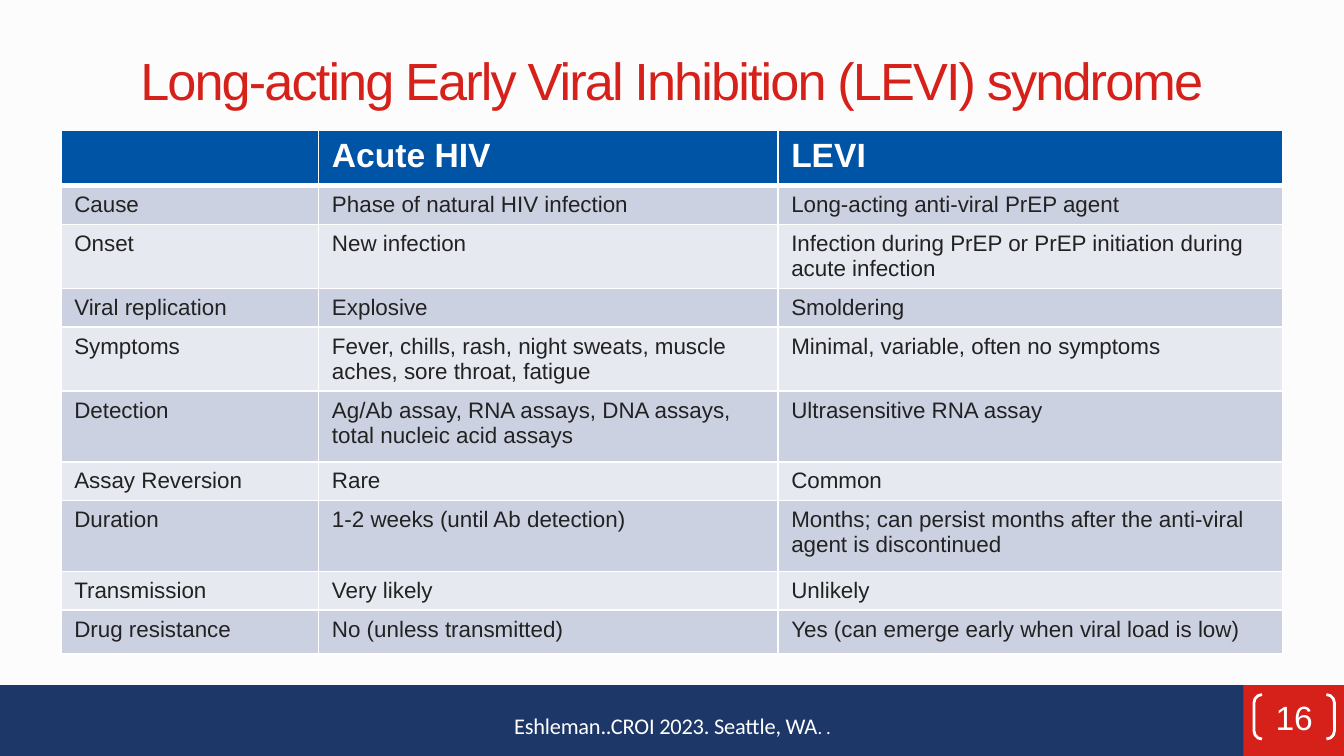
from lxml import etree
from pptx import Presentation
from pptx import util as u
from pptx.dml.color import RGBColor
from pptx.enum import shapes, text
from pptx.oxml.ns import qn

RED = RGBColor(0xD6, 0x20, 0x1A)
NAVY = RGBColor(0x1C, 0x37, 0x68)
BLUE = RGBColor(0x00, 0x54, 0xA6)
BAND_DARK = RGBColor(0xCC, 0xD1, 0xE1)
BAND_LIGHT = RGBColor(0xE7, 0xE9, 0xF1)
INK = RGBColor(0x22, 0x22, 0x22)
WHITE = RGBColor(0xFF, 0xFF, 0xFF)
PAPER = RGBColor(0xFC, 0xFC, 0xFC)

COLUMN_WIDTHS = [4.87, 8.68, 9.54]
ROW_HEIGHTS = [1.04, 0.73, 1.21, 0.73, 1.21, 1.34, 0.73, 1.34, 0.73, 0.83]
ROWS = [
    ("", "Acute HIV", "LEVI"),
    ("Cause", "Phase of natural HIV infection", "Long-acting anti-viral PrEP agent"),
    ("Onset", "New infection",
     "Infection during PrEP or PrEP initiation during acute infection"),
    ("Viral replication", "Explosive", "Smoldering"),
    ("Symptoms", "Fever, chills, rash, night sweats, muscle aches, sore throat, fatigue",
     "Minimal, variable, often no symptoms"),
    ("Detection", "Ag/Ab assay, RNA assays, DNA assays, total nucleic acid assays",
     "Ultrasensitive RNA assay"),
    ("Assay Reversion", "Rare", "Common"),
    ("Duration", "1-2 weeks (until Ab detection)",
     "Months; can persist months after the anti-viral agent is discontinued"),
    ("Transmission", "Very likely", "Unlikely"),
    ("Drug resistance", "No (unless transmitted)",
     "Yes (can emerge early when viral load is low)"),
]


def place(left, top, width, height):
    return u.Cm(left), u.Cm(top), u.Cm(width), u.Cm(height)


def style_span(span, size, color, font="Arial", bold=False, spacing=None):
    span.font.size = u.Pt(size)
    span.font.name = font
    span.font.bold = bold
    span.font.color.rgb = color
    if spacing is not None:
        span.font._element.set("spc", str(spacing))  # hundredths of a point


def set_frame(frame, anchor, margin=0):
    frame.word_wrap = True
    frame.vertical_anchor = anchor
    frame.margin_left = frame.margin_right = u.Cm(margin)
    frame.margin_top = frame.margin_bottom = u.Cm(margin)
    frame.paragraphs[0].alignment = text.PP_ALIGN.CENTER


def add_bar(slide, left, width, color):
    bar = slide.shapes.add_shape(
        shapes.MSO_SHAPE.RECTANGLE, *place(left, 12.95, width, 1.34))
    bar.shadow.inherit = False
    bar.fill.solid()
    bar.fill.fore_color.rgb = color
    bar.line.fill.background()


def set_title(slide, wording):
    title = slide.shapes.title
    title.left, title.top, title.width, title.height = place(1.15, 0.3, 23.09, 2.4)
    title.text_frame.text = wording
    set_frame(title.text_frame, text.MSO_ANCHOR.MIDDLE, 0.13)
    style_span(title.text_frame.paragraphs[0].runs[0], 28, RED, spacing=-100)


def set_borders(cell, widths):
    properties = cell._tc.get_or_add_tcPr()
    for index, (side, width) in enumerate(widths.items()):
        line = etree.Element(qn(f"a:ln{side}"), w=str(u.Pt(width)))
        fill = etree.SubElement(line, qn("a:solidFill"))
        etree.SubElement(fill, qn("a:srgbClr"), val=str(WHITE))
        properties.insert(index, line)


def add_comparison(slide):
    frame = slide.shapes.add_table(
        len(ROWS), len(COLUMN_WIDTHS),
        *place(1.15, 2.47, sum(COLUMN_WIDTHS), sum(ROW_HEIGHTS)))
    table = frame.table
    for column, width in zip(table.columns, COLUMN_WIDTHS):
        column.width = u.Cm(width)
    for index, (row, height, wordings) in enumerate(zip(table.rows, ROW_HEIGHTS, ROWS)):
        row.height = u.Cm(height)
        header = index == 0
        color = BLUE if header else (BAND_LIGHT, BAND_DARK)[index % 2]
        # The heavier rule lies between the header and the first row
        borders = {"L": 1, "R": 1, "T": 3 if index == 1 else 1, "B": 3 if header else 1}
        for cell, wording in zip(row.cells, wordings):
            cell.fill.solid()
            cell.fill.fore_color.rgb = color
            set_borders(cell, borders)
            cell.text_frame.text = wording
            for span in cell.text_frame.paragraphs[0].runs:
                style_span(span, 18 if header else 12, WHITE if header else INK, bold=header)


def add_page_number(slide, number):
    badge = slide.shapes.add_shape(
        shapes.MSO_SHAPE.DOUBLE_BRACKET, *place(23.7, 13.13, 1.52, 0.84))
    badge.adjustments[0] = 0.18
    badge.shadow.inherit = False
    badge.fill.background()
    badge.line.color.rgb = WHITE
    badge.line.width = u.Pt(1.5)
    badge.text_frame.text = number
    set_frame(badge.text_frame, text.MSO_ANCHOR.MIDDLE)
    style_span(badge.text_frame.paragraphs[0].runs[0], 18, WHITE)


def add_citation(slide):
    box = slide.shapes.add_textbox(*place(4.24, 13.16, 16.94, 0.81))
    set_frame(box.text_frame, text.MSO_ANCHOR.BOTTOM)
    para = box.text_frame.paragraphs[0]
    for wording, size in (("Eshleman..CROI 2023. Seattle, WA", 12), (". .", 10)):
        span = para.add_run()
        span.text = wording
        style_span(span, size, WHITE, "Calibri", spacing=-10)


def main():
    deck = Presentation()
    deck.slide_width, deck.slide_height = u.Cm(25.4), u.Cm(14.29)
    slide = deck.slides.add_slide(deck.slide_layouts[5])
    slide.background.fill.solid()
    slide.background.fill.fore_color.rgb = PAPER

    # Footer band
    add_bar(slide, 0, 25.4, NAVY)
    add_bar(slide, 23.5, 1.9, RED)

    # Title and comparison table
    set_title(slide, "Long-acting Early Viral Inhibition (LEVI) syndrome")
    add_comparison(slide)

    # Footer text
    add_page_number(slide, "16")
    add_citation(slide)
    deck.save("out.pptx")


if __name__ == "__main__":
    main()
